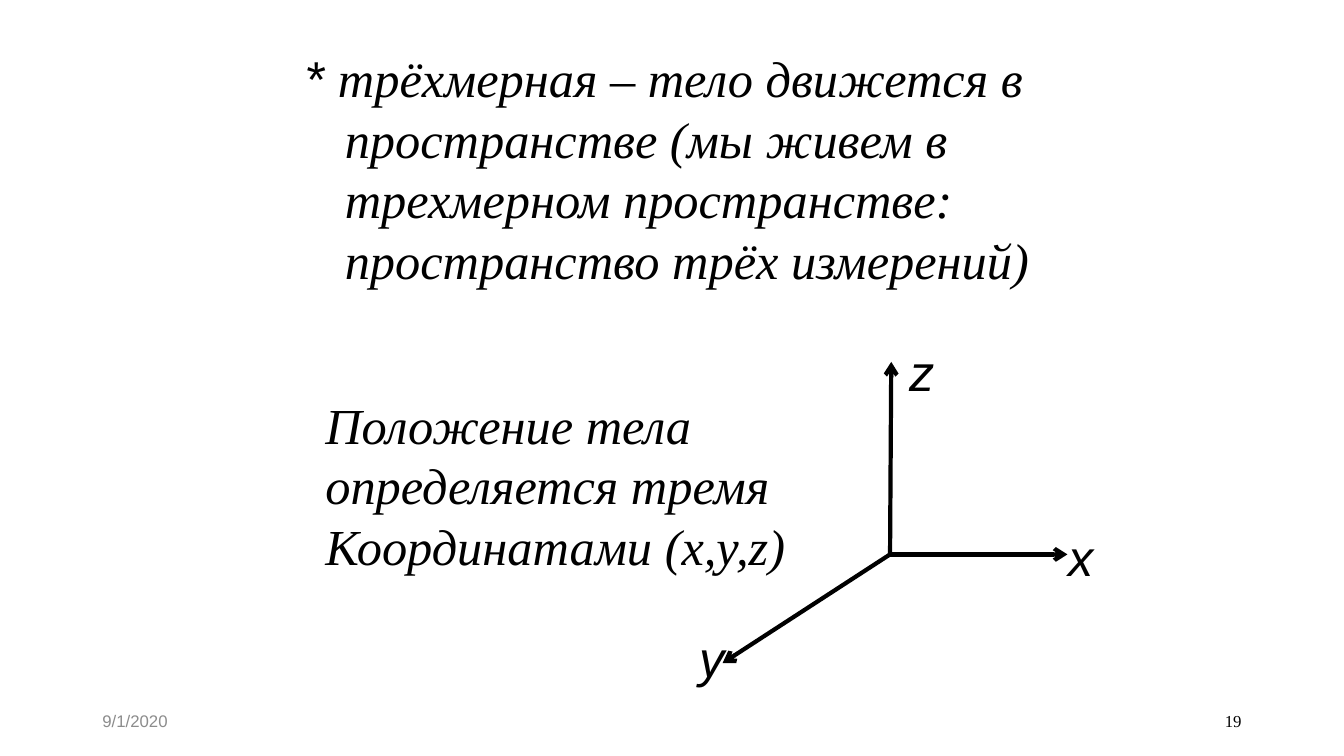
from lxml import etree
from pptx import Presentation
from pptx.dml.color import RGBColor
from pptx.enum.shapes import MSO_CONNECTOR
from pptx.enum.text import MSO_ANCHOR, MSO_AUTO_SIZE, PP_ALIGN
from pptx.oxml.ns import qn
from pptx.util import Cm, Pt

BLACK, GREY = "000000", "8C8C8C"
SERIF, SANS = "Times New Roman", "Arial"
LARGE, SMALL = 36, 12


def color(hex_value):
    return RGBColor.from_string(hex_value)


def style_font(font, name, size, hex_value=BLACK, italic=False):
    font.name = name
    font.size = Pt(size)
    font.italic = italic
    font.color.rgb = color(hex_value)


def add_text_frame(slide, box, wrap=True):
    """Add an empty text box; box is left, top, width, height in cm."""
    frame = slide.shapes.add_textbox(*map(Cm, box)).text_frame
    frame.word_wrap = wrap
    return frame


def add_large_text(slide, box, lines, font_name, alignment=PP_ALIGN.LEFT, wrap=True):
    frame = add_text_frame(slide, box, wrap)
    frame.auto_size = MSO_AUTO_SIZE.SHAPE_TO_FIT_TEXT
    for index, line in enumerate(lines):
        paragraph = frame.add_paragraph() if index else frame.paragraphs[0]
        paragraph.text = line
        paragraph.alignment = alignment
        paragraph.line_spacing = Pt(1.2 * LARGE)
        style_font(paragraph.font, font_name, LARGE, italic=True)
    return frame


def add_definition(slide, box):
    """Starred definition with a hanging indent."""
    paragraph = add_large_text(slide, box, ["* "], SERIF).paragraphs[0]
    paragraph.runs[0].font.name = SANS
    paragraph.add_run().text = (
        "трёхмерная – тело движется в пространстве "
        "(мы живем в трехмерном пространстве: пространство трёх измерений)"
    )
    properties = paragraph._p.get_or_add_pPr()
    properties.set("marL", str(Cm(1.02)))
    properties.set("indent", str(-Cm(1.02)))


def add_position_note(slide, box):
    lines = ["Положение тела", "определяется тремя", "Координатами (x,y,z)"]
    add_large_text(slide, box, lines, SERIF, PP_ALIGN.JUSTIFY)


def add_axis(slide, start, end):
    axis = slide.shapes.add_connector(MSO_CONNECTOR.STRAIGHT, *map(Cm, start + end))
    axis.line.color.rgb = color(BLACK)
    axis.line.width = Pt(3)
    etree.SubElement(axis.line._get_or_add_ln(), qn("a:tailEnd"), type="arrow")
    etree.SubElement(axis._element.spPr, qn("a:effectLst"))


def add_coordinate_axes(slide, box):
    """Three axes filling the box, each with its letter near the tip."""
    left, top, width, height = box
    origin = (left + 4.22, top + 4.85)
    # Letter, tip of the axis, offset of the label from the tip
    axes = [
        ("z", (origin[0] + 0.03, top), (0.2, -0.66)),
        ("x", (left + width, origin[1]), (-0.23, -0.84)),
        ("y", (left, top + height), (-0.84, -1.02)),
    ]
    for letter, tip, offset in axes:
        add_axis(slide, origin, tip)
        label_box = (tip[0] + offset[0], tip[1] + offset[1], 1.14, 1.8)
        add_large_text(slide, label_box, [letter], SANS, wrap=False)


def add_footer(slide, box):
    """Date at the left end of the box, slide number at the right."""
    left, top, width, height = box
    field_width = 7.62
    fields = [
        ("9/1/2020", left, PP_ALIGN.LEFT, SANS, GREY),
        ("19", left + width - field_width, PP_ALIGN.RIGHT, SERIF, BLACK),
    ]
    for text, field_left, alignment, font_name, hex_value in fields:
        frame = add_text_frame(slide, (field_left, top, field_width, height))
        frame.vertical_anchor = MSO_ANCHOR.MIDDLE
        paragraph = frame.paragraphs[0]
        paragraph.text = text
        paragraph.alignment = alignment
        style_font(paragraph.font, font_name, SMALL, hex_value)


def main():
    presentation = Presentation()
    presentation.slide_width = Cm(33.87)
    presentation.slide_height = Cm(19.05)
    slide = presentation.slides.add_slide(presentation.slide_layouts[6])

    add_definition(slide, (7.42, 1.07, 21.39, 6.4))
    add_position_note(slide, (7.95, 9.8, 13.54, 4.88))
    add_coordinate_axes(slide, (18.21, 9.12, 8.69, 7.59))
    add_footer(slide, (2.33, 17.66, 29.21, 1.01))

    presentation.save("out.pptx")


if __name__ == "__main__":
    main()
